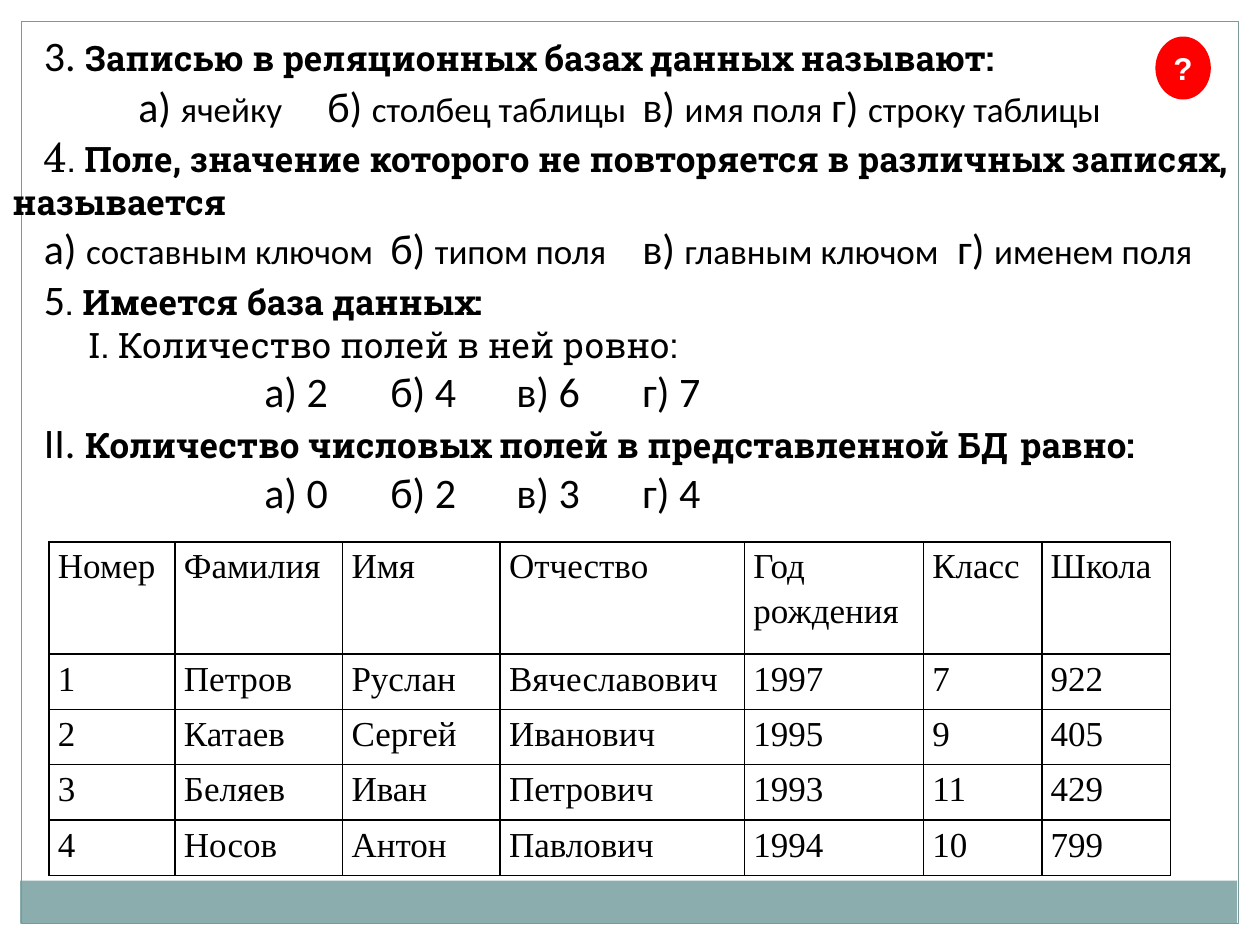
import pptx
import pptx.dml.color
import pptx.enum.shapes
import pptx.enum.text
import pptx.oxml
import pptx.oxml.ns
import pptx.util

Inches = pptx.util.Inches
Pt = pptx.util.Pt
Shapes = pptx.enum.shapes.MSO_SHAPE
Anchor = pptx.enum.text.MSO_ANCHOR
namespace = pptx.oxml.ns.nsdecls("a")


def color(hex_string):
    return pptx.dml.color.RGBColor.from_string(hex_string)


def add_span(para, text, name, size, bold=False, ink="000000"):
    span = para.add_run()
    span.text = text
    for key, value in {"name": name, "size": Pt(size), "bold": bold}.items():
        setattr(span.font, key, value)
    span.font.color.rgb = color(ink)


deck = pptx.Presentation()
deck.slide_width, deck.slide_height = Inches(10), Inches(7.5)
page = deck.slides.add_slide(deck.slide_layouts[6])

panels = [
    (Shapes.RECTANGLE, (0, 0, 10, 0.17), "FFFFFF", None),
    (Shapes.RECTANGLE, (9.83, 0, 0.17, 7.5), "FFFFFF", None),
    (Shapes.RECTANGLE, (0, 0, 0.17, 7.5), "FFFFFF", None),
    (Shapes.RECTANGLE, (0.16, 6.99, 9.66, 0.34), "8CADAE", None),
    (Shapes.RECTANGLE, (0.17, 0.17, 9.66, 7.16), None, "7C999A"),
    (Shapes.OVAL, (9.17, 0.29, 0.44, 0.5), "FF0000", None),
]
for kind, place, fill, line in panels:
    panel = page.shapes.add_shape(kind, *map(Inches, place))
    panel.shadow.inherit = False
    if fill:
        panel.fill.solid()
        panel.fill.fore_color.rgb = color(fill)
    else:
        panel.fill.background()
    if line:
        panel.line.color.rgb = color(line)
        panel.line.width = Pt(0.75)
    else:
        panel.line.fill.background()

badge = panel
badge_format = {"word_wrap": False, "vertical_anchor": Anchor.MIDDLE}
for key, value in badge_format.items():
    setattr(badge.text_frame, key, value)
para = badge.text_frame.paragraphs[0]
para.alignment = pptx.enum.text.PP_ALIGN.CENTER
add_span(para, "?", "Arial", 18, True, "FFFFFF")

records = [
    ["Номер", "Фамилия", "Имя", "Отчество", "Год рождения", "Класс", "Школа"],
    ["1", "Петров", "Руслан", "Вячеславович", "1997", "7", "922"],
    ["2", "Катаев", "Сергей", "Иванович", "1995", "9", "405"],
    ["3", "Беляев", "Иван", "Петрович", "1993", "11", "429"],
    ["4", "Носов", "Антон", "Павлович", "1994", "10", "799"],
]
widths = [1, 1.33, 1.25, 1.94, 1.42, 0.94, 1.02]
heights = [0.89] + [0.44] * 4
table = page.shapes.add_table(
    len(heights), len(widths), Inches(0.39), Inches(4.3), Inches(sum(widths)), Inches(sum(heights))
).table
for column, width in zip(table.columns, widths):
    column.width = Inches(width)
cell_format = {
    "margin_left": Inches(0.07), "margin_right": Inches(0.07),
    "margin_top": 0, "margin_bottom": 0,
}
for row, height, record in zip(table.rows, heights, records):
    row.height = Inches(height)
    for cell, text in zip(row.cells, record):
        for key, value in cell_format.items():
            setattr(cell, key, value)
        cell.fill.background()
        para = cell.text_frame.paragraphs[0]
        para.line_spacing = 1.15
        add_span(para, text, "Times New Roman", 20)
        properties = cell._tc.get_or_add_tcPr()
        for position, side in enumerate("LRTB"):
            properties.insert(position, pptx.oxml.parse_xml(
                f'<a:ln{side} {namespace} w="{Pt(1)}"><a:solidFill>'
                f'<a:srgbClr val="000000"/></a:solidFill></a:ln{side}>'
            ))

mark = ("Calibri", 24)
answer = ("Calibri", 20)
slab = ("Roboto Slab", 20)
question = ("Roboto Slab", 20, True)
quiz = [
    (0.25, [], [("3. ", mark), ("Записью в реляционных базах данных называют:", question)]),
    (1, [2.38, 4.93, 6.58], [
        ("а) ", mark), ("ячейку", answer), ("\tб) ", mark), ("столбец таблицы", answer),
        ("\tв) ", mark), ("имя поля", answer), ("\tг) ", mark), ("строку таблицы", answer)]),
    (0.25, [], [
        ("4", ("TeX Gyre Schola", 24)), (". ", slab),
        ("Поле, значение которого не повторяется в различных записях, называется", question)]),
    (0.25, [3.12, 5.09, 7.81], [
        ("а) ", mark), ("составным ключом", answer), ("\tб) ", mark), ("типом поля", answer),
        ("\tв) ", mark), ("главным ключом", answer), ("\tг) ", mark), ("именем поля", answer)]),
    (0.25, [], [("5", mark), (". ", slab), ("Имеется база данных:", question)]),
    (0.6, [], [("I. Количество полей в ней ровно:", slab)]),
    (2, [3, 4, 5], [("а) 2\tб) 4\tв) 6\tг) 7", mark)]),
    (0.25, [8.6], [
        ("II. ", mark), ("Количество числовых полей в представленной БД\tравно:", question)]),
    (2, [3, 4, 5.03], [("а) 0\tб) 2\tв) 3\tг) 4", mark)]),
]
box = page.shapes.add_textbox(0, 0, Inches(10), Inches(4.34))
frame = box.text_frame
frame_format = {
    "word_wrap": True, "vertical_anchor": Anchor.MIDDLE,
    "auto_size": pptx.enum.text.MSO_AUTO_SIZE.SHAPE_TO_FIT_TEXT,
}
for key, value in frame_format.items():
    setattr(frame, key, value)
for number, (indent, stops, spans) in enumerate(quiz):
    para = frame.add_paragraph() if number else frame.paragraphs[0]
    properties = para._p.get_or_add_pPr()
    properties.set("marL", "0")
    properties.set("indent", str(Inches(indent)))
    if stops:
        tabs = "".join(f'<a:tab pos="{Inches(stop)}" algn="l"/>' for stop in stops)
        properties.append(pptx.oxml.parse_xml(f"<a:tabLst {namespace}>{tabs}</a:tabLst>"))
    for text, style in spans:
        add_span(para, text, *style)

deck.save("out.pptx")
